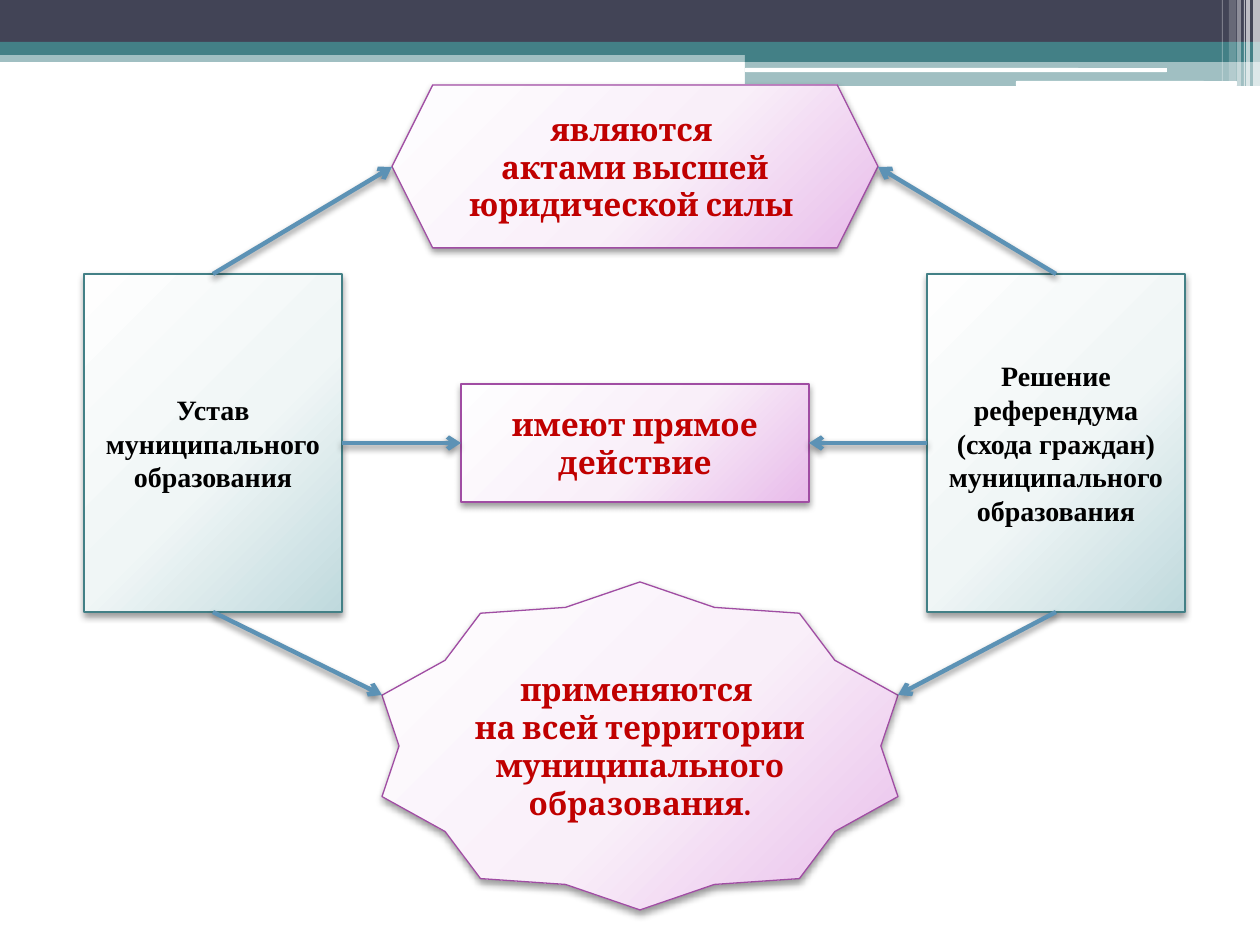
from pptx import Presentation
from pptx.dml.color import RGBColor
from pptx.enum.shapes import MSO_CONNECTOR, MSO_SHAPE
from pptx.enum.text import MSO_ANCHOR, PP_ALIGN
from pptx.oxml import parse_xml
from pptx.oxml.ns import nsdecls, qn
from pptx.util import Emu, Pt
from lxml import etree

RECT, ROUND = MSO_SHAPE.RECTANGLE, MSO_SHAPE.ROUNDED_RECTANGLE
HEXAGON, STAR = MSO_SHAPE.HEXAGON, MSO_SHAPE.STAR_10_POINT
PROCESS = MSO_SHAPE.FLOWCHART_PROCESS
STRAIGHT = MSO_CONNECTOR.STRAIGHT
MIDDLE, CENTER = MSO_ANCHOR.MIDDLE, PP_ALIGN.CENTER
TOP, LEFT, BOTTOM, RIGHT = range(4)

WHITE = RGBColor(0xFF, 0xFF, 0xFF)
BLACK = RGBColor(0x00, 0x00, 0x00)
NAVY = RGBColor(0x42, 0x44, 0x56)
TEAL = RGBColor(0x43, 0x80, 0x86)
PURPLE = RGBColor(0xA0, 0x4D, 0xA3)
RED = RGBColor(0xC0, 0x00, 0x00)
BLUE = RGBColor(0x5C, 0x92, 0xB5)
TEAL_TINTS = (RGBColor(0xFE, 0xFE, 0xFE), RGBColor(0xF0, 0xF6, 0xF6), RGBColor(0xBF, 0xD9, 0xDD))
PURPLE_TINTS = (RGBColor(0xFE, 0xFE, 0xFF), RGBColor(0xF9, 0xEF, 0xF9), RGBColor(0xE8, 0xBB, 0xEA))

SCALE = 914400 / 126


def px(length):
    return Emu(round(length * SCALE))


class Diagram:
    """Draws the banner, cards and arrows of one slide in a shared style."""

    def __init__(self, slide):
        self.slide = slide

    def bar(self, box, color, opacity=100, kind=RECT):
        bar = self.slide.shapes.add_shape(kind, *map(px, box))
        bar.shadow.inherit = False
        bar.fill.solid()
        bar.fill.fore_color.rgb = color
        bar.line.fill.background()
        if opacity < 100:
            tone = bar.fill._xPr.find(qn("a:solidFill"))[0]
            etree.SubElement(tone, qn("a:alpha"), val=str(opacity * 1000))

    def card(self, kind, box, text, tints, outline, font, size, color):
        card = self.slide.shapes.add_shape(kind, *map(px, box))
        self.shade(card, tints)
        card.line.color.rgb = outline
        card.line.width = Pt(0.75)
        card.shadow.inherit = False
        self.cast_shadow(card._element.spPr.find(qn("a:effectLst")), 40)
        frame = card.text_frame
        frame.text = text
        frame.word_wrap = True
        frame.vertical_anchor = MIDDLE
        for paragraph in frame.paragraphs:
            paragraph.alignment = CENTER
            for run in paragraph.runs:
                run.font.name = font
                run.font.size = Pt(size)
                run.font.bold = True
                run.font.color.rgb = color
        return card

    def source(self, box, text):
        return self.card(RECT, box, text, TEAL_TINTS, TEAL, "Times New Roman", 16, BLACK)

    def feature(self, kind, box, text):
        return self.card(kind, box, text, PURPLE_TINTS, PURPLE, "Cambria", 18, RED)

    def arrow(self, origin, side, tip=(0, 0), target=None, target_side=None):
        arrow = self.slide.shapes.add_connector(STRAIGHT, 0, 0, *map(px, tip))
        arrow.begin_connect(origin, side)
        if target is not None:
            arrow.end_connect(target, target_side)
        arrow.line.color.rgb = BLUE
        arrow.line.width = Pt(2.5)
        etree.SubElement(arrow.line._get_or_add_ln(), qn("a:tailEnd"), type="arrow")
        effects = etree.SubElement(arrow._element.spPr, qn("a:effectLst"))
        self.cast_shadow(effects, 45)

    def shade(self, card, tints):
        card.fill.background()
        stops = "".join(
            f'<a:gs pos="{position}000"><a:srgbClr val="{tint}"/></a:gs>'
            for position, tint in zip((0, 55, 100), tints)
        )
        gradient = parse_xml(
            f'<a:gradFill {nsdecls("a")} rotWithShape="1"><a:gsLst>{stops}</a:gsLst>'
            '<a:path path="circle"><a:fillToRect l="-40000" t="-90000" r="140000" b="190000"/>'
            "</a:path></a:gradFill>"
        )
        properties = card._element.spPr
        properties.replace(properties.find(qn("a:noFill")), gradient)

    def cast_shadow(self, effects, opacity):
        effects.append(parse_xml(
            f'<a:outerShdw {nsdecls("a")} blurRad="{Pt(4)}" dist="{Pt(2)}" dir="5400000" '
            f'rotWithShape="0"><a:srgbClr val="{BLACK}"><a:alpha val="{opacity}000"/>'
            "</a:srgbClr></a:outerShdw>"
        ))


def main():
    deck = Presentation()
    deck.slide_width, deck.slide_height = px(1260), px(945)
    diagram = Diagram(deck.slides.add_slide(deck.slide_layouts[6]))

    diagram.bar((0, 50, 1260, 12), TEAL, 50)
    diagram.bar((0, 0, 1260, 43), NAVY)
    diagram.bar((0, 42, 1260, 13), TEAL)
    diagram.bar((745, 49, 515, 13), TEAL)
    diagram.bar((745, 61, 515, 25), TEAL, 50)
    diagram.bar((745, 68, 422, 4), WHITE, kind=ROUND)
    diagram.bar((1016, 81, 221, 5), WHITE, kind=ROUND)
    for left, width, height, opacity in (
        (1253, 7, 86, 65), (1246, 4, 86, 65), (1244, 1, 86, 60),
        (1237, 4, 86, 40), (1229, 7, 81, 20), (1222, 1, 81, 30),
    ):
        diagram.bar((left, 0, width, height), WHITE, opacity)

    charter = diagram.source((84, 274, 258, 338), "Устав муниципального образования")
    referendum = diagram.source(
        (927, 274, 258, 338),
        "Решение референдума (схода граждан) муниципального образования",
    )
    territory = diagram.feature(
        STAR, (382, 582, 516, 328),
        "применяются \nна всей территории муниципального образования.",
    )
    territory.adjustments[0] = 0.444
    diagram.feature(
        HEXAGON, (392, 85, 486, 163), "являются \nактами высшей юридической силы "
    )
    direct_effect = diagram.feature(PROCESS, (461, 384, 348, 118), "имеют прямое действие")

    for act, inner_side, force_x, territory_x in (
        (charter, RIGHT, 392, 382), (referendum, LEFT, 878, 898),
    ):
        diagram.arrow(act, BOTTOM, (territory_x, 695))
        diagram.arrow(act, TOP, (force_x, 167))
        facing_side = LEFT if inner_side == RIGHT else RIGHT
        diagram.arrow(act, inner_side, target=direct_effect, target_side=facing_side)

    deck.save("out.pptx")


if __name__ == "__main__":
    main()
